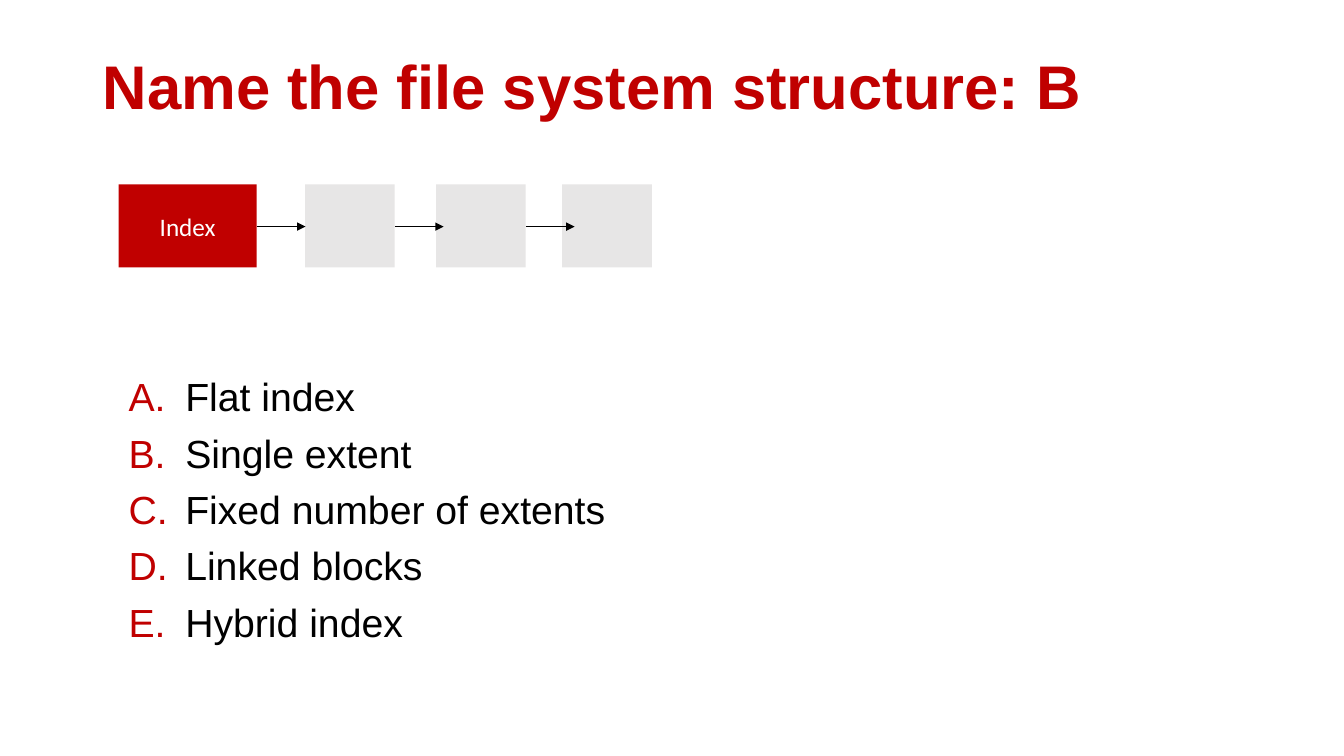
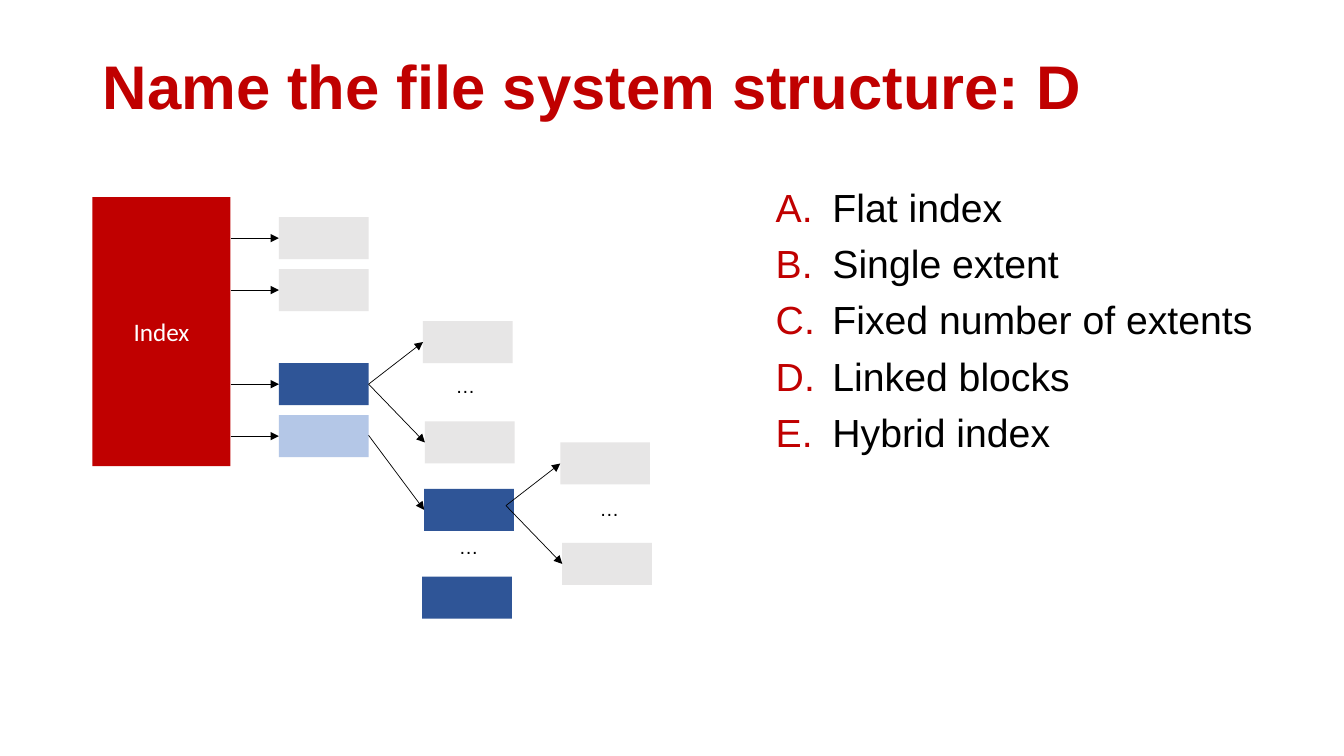
from dataclasses import dataclass

from lxml.etree import SubElement
from pptx import Presentation
from pptx.dml.color import RGBColor
from pptx.enum.shapes import MSO_CONNECTOR as Connector, MSO_SHAPE as Preset
from pptx.enum.text import MSO_ANCHOR as Anchor, PP_ALIGN as Align
from pptx.oxml.ns import qn
from pptx.util import Cm, Pt


@dataclass(frozen=True)
class Theme:
    accent: RGBColor = RGBColor(0xC0, 0x00, 0x00)
    ink: RGBColor = RGBColor(0x00, 0x00, 0x00)
    paper: RGBColor = RGBColor(0xFF, 0xFF, 0xFF)
    data: RGBColor = RGBColor(0xE7, 0xE6, 0xE6)
    indirect: RGBColor = RGBColor(0x2F, 0x55, 0x97)
    double_indirect: RGBColor = RGBColor(0xB4, 0xC7, 0xE7)
    text_font: str = "Arial"
    label_font: str = "Calibri"
    title_size: int = 44
    choice_size: int = 28
    label_size: int = 18
    dots_size: int = 14
    line_width: float = 0.5


CHOICES = (
    "Flat index",
    "Single extent",
    "Fixed number of extents",
    "Linked blocks",
    "Hybrid index",
)
INDEX_WIDTH = 3.48
BLOCK_WIDTH = 2.26
BLOCK_HEIGHT = 1.06
LINK_LENGTH = 1.23


def apply(target, values):
    for name, value in values.items():
        setattr(target, name, value)


class SlideBuilder:
    def __init__(self, deck, theme):
        self.deck = deck
        self.theme = theme
        self.page = None

    def start(self, title):
        self.page = self.deck.slides.add_slide(self.deck.slide_layouts[6])
        box = self.text_box(2.34, 0.41, 29.21, 3.68, vertical_anchor=Anchor.MIDDLE)
        para = box.text_frame.paragraphs[0]
        self.add_text(para, title, self.theme.title_size, self.theme.accent,
                      bold=True, line_spacing=0.9)

    def text_box(self, left, top, width, height, **frame_values):
        box = self.page.shapes.add_textbox(Cm(left), Cm(top), Cm(width), Cm(height))
        apply(box.text_frame, {"word_wrap": True, **frame_values})
        return box

    def add_text(self, para, text, size, color, font=None, bold=False, **para_values):
        apply(para, para_values)
        span = para.add_run()
        span.text = text
        apply(span.font, {"name": font or self.theme.text_font,
                          "size": Pt(size), "bold": bold})
        span.font.color.rgb = color

    def block(self, left, top, color, width=BLOCK_WIDTH, height=BLOCK_HEIGHT):
        shape = self.page.shapes.add_shape(
            Preset.RECTANGLE, Cm(left), Cm(top), Cm(width), Cm(height))
        shape.shadow.inherit = False
        shape.fill.solid()
        shape.fill.fore_color.rgb = color
        shape.line.fill.background()
        return shape

    def index(self, left, top, height):
        shape = self.block(left, top, self.theme.accent, INDEX_WIDTH, height)
        shape.text_frame.vertical_anchor = Anchor.MIDDLE
        self.add_text(shape.text_frame.paragraphs[0], "Index", self.theme.label_size,
                      self.theme.paper, self.theme.label_font, alignment=Align.CENTER)

    def arrow(self, x1, y1, x2, y2):
        connector = self.page.shapes.add_connector(
            Connector.STRAIGHT, Cm(x1), Cm(y1), Cm(x2), Cm(y2))
        connector.line.color.rgb = self.theme.ink
        connector.line.width = Pt(self.theme.line_width)
        SubElement(connector.get_or_add_ln(), qn("a:tailEnd"), type="triangle")
        SubElement(connector.element.spPr, qn("a:effectLst"))

    def dots(self, left, top):
        box = self.text_box(left, top, 2.18, 0.86, margin_left=0, margin_right=0)
        self.add_text(box.text_frame.paragraphs[0], "…", self.theme.dots_size,
                      self.theme.ink, alignment=Align.CENTER)

    def fan(self, x, y):
        for dx, dy in ((1.37, -1.06), (1.42, 1.47)):
            self.block(x + dx, y + dy - BLOCK_HEIGHT / 2, self.theme.data)
            self.arrow(x, y, x + dx, y + dy)

    def choices(self, left, top):
        frame = self.text_box(left, top, 13.28, 8.0).text_frame
        for number, choice in enumerate(CHOICES):
            para = frame.add_paragraph() if number else frame.paragraphs[0]
            self.add_text(para, choice, self.theme.choice_size, self.theme.ink,
                          line_spacing=0.9, space_before=Pt(10))
            self.letter(para)

    def letter(self, para):
        props = para._p.get_or_add_pPr()
        props.set("marL", str(Cm(1.43)))
        props.set("indent", str(Cm(-1.43)))
        color = SubElement(props, qn("a:buClr"))
        SubElement(color, qn("a:srgbClr"), val=str(self.theme.accent))
        SubElement(props, qn("a:buFont"), typeface=self.theme.text_font)
        SubElement(props, qn("a:buAutoNum"), type="alphaUcPeriod")


def build_linked_blocks(builder):
    left, top, height = 2.99, 4.65, 2.09
    middle = top + 1.06
    block_lefts = (7.69, 10.99, 14.17)
    builder.start("Name the file system structure: B")
    builder.index(left, top, height)
    for block_left in block_lefts:
        builder.block(block_left, top, builder.theme.data, height=height)
    link_starts = [left + INDEX_WIDTH]
    link_starts += [block_left + BLOCK_WIDTH for block_left in block_lefts[:-1]]
    for start in link_starts:
        builder.arrow(start, middle, start + LINK_LENGTH, middle)
    builder.choices(2.99, 9.4)


def build_hybrid_index(builder):
    theme = builder.theme
    index_left, column_left, row_pitch = 2.33, 7.03, 1.31
    index_right = index_left + INDEX_WIDTH
    column_right = column_left + BLOCK_WIDTH
    half = BLOCK_HEIGHT / 2
    groups = (
        (5.47, (theme.data, theme.data)),
        (9.15, (theme.indirect, theme.double_indirect)),
    )
    builder.start("Name the file system structure: D")
    builder.index(index_left, 4.97, 6.78)
    for group_top, colors in groups:
        for row, color in enumerate(colors):
            top = group_top + row * row_pitch
            builder.arrow(index_right, top + half, column_left, top + half)
            builder.block(column_left, top, color)

    builder.fan(column_right, 9.68)
    builder.block(10.69, 12.32, theme.indirect)
    builder.arrow(column_right, 10.97, 10.69, 12.85)
    builder.block(10.64, 14.53, theme.indirect)
    builder.fan(12.75, 12.74)
    for left, top in ((10.64, 9.3), (14.27, 12.4), (10.72, 13.36)):
        builder.dots(left, top)
    builder.choices(19.3, 4.62)


def main():
    deck = Presentation()
    apply(deck, {"slide_width": Cm(33.87), "slide_height": Cm(19.05)})
    builder = SlideBuilder(deck, Theme())
    build_linked_blocks(builder)
    build_hybrid_index(builder)
    deck.save("out.pptx")


if __name__ == "__main__":
    main()
